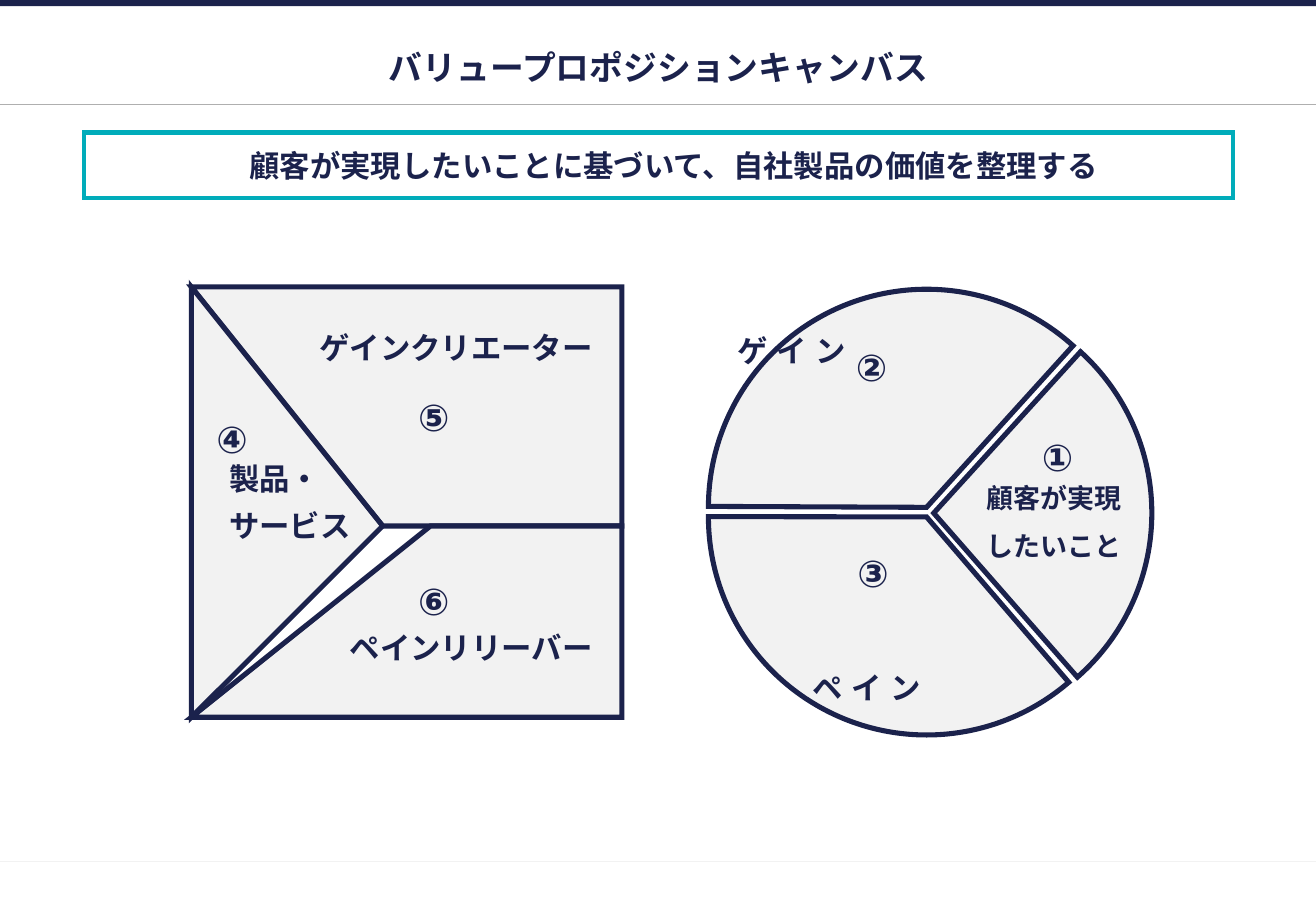
from lxml.etree import SubElement
from pptx import Presentation
from pptx.dml.color import RGBColor
from pptx.enum.shapes import MSO_CONNECTOR, MSO_SHAPE
from pptx.enum.text import MSO_ANCHOR, PP_ALIGN
from pptx.oxml.ns import qn
from pptx.util import Cm, Pt

NAVY, TEAL, PALE, GREY, WHITE = "1B224C", "00ACBA", "F2F2F2", "AFAFAF", "FFFFFF"
SLIDE_WIDTH, SLIDE_HEIGHT = 27.51, 19.05
LEFT, CENTER, RIGHT = PP_ALIGN.LEFT, PP_ALIGN.CENTER, PP_ALIGN.RIGHT
TOP, MIDDLE, BOTTOM = MSO_ANCHOR.TOP, MSO_ANCHOR.MIDDLE, MSO_ANCHOR.BOTTOM


def color(value):
    """Turn a hex string into a colour."""
    return RGBColor.from_string(value)


class CanvasPage:
    """Hold the style and the current page, and draw each kind of element."""

    font_name = "Arial"

    def __init__(self, page):
        """Keep the page to draw on."""
        self.page = page

    def paint(self, shape, fill, line=None, width=3):
        """Set the fill and the sharp-cornered outline of a shape."""
        shape.shadow.inherit = False
        shape.fill.solid()
        shape.fill.fore_color.rgb = color(fill)
        if line is None:
            shape.line.fill.background()
            return shape
        shape.line.color.rgb = color(line)
        shape.line.width = Pt(width)
        SubElement(shape._element.spPr.find(qn("a:ln")), qn("a:miter"), lim="800000")
        return shape

    def add_text(self, shape, text, size=18, align=CENTER, anchor=MIDDLE, insets=(0, 0, 0, 0)):
        """Fill a shape with bold text and return its paragraphs."""
        frame = shape.text_frame
        frame.text = text
        frame.word_wrap = True
        frame.vertical_anchor = anchor
        frame.margin_left, frame.margin_top, frame.margin_right, frame.margin_bottom = map(Cm, insets)
        for para in frame.paragraphs:
            para.alignment = align
            for span in para.runs:
                span.font.size = Pt(size)
                span.font.bold = True
                span.font.color.rgb = color(NAVY)
                span.font.name = self.font_name
                SubElement(span._r.get_or_add_rPr(), qn("a:ea"), typeface=self.font_name)
        return frame.paragraphs

    def rectangle(self, left, top, width, height, fill, line=None, weight=3):
        """Draw a rectangle."""
        box = self.page.shapes.add_shape(
            MSO_SHAPE.RECTANGLE, Cm(left), Cm(top), Cm(width), Cm(height))
        return self.paint(box, fill, line, weight)

    def rule(self, top, line):
        """Draw a thin line across the page."""
        rule = self.page.shapes.add_connector(
            MSO_CONNECTOR.STRAIGHT, 0, Cm(top), Cm(SLIDE_WIDTH), Cm(top))
        rule.line.color.rgb = color(line)
        rule.line.width = Pt(0.75)
        SubElement(rule._element.spPr, qn("a:effectLst"))

    def label(self, left, top, width, height, text, size):
        """Place a centred text box and return its paragraphs."""
        box = self.page.shapes.add_textbox(Cm(left), Cm(top), Cm(width), Cm(height))
        return self.add_text(box, text, size)

    def number(self, x, y, text):
        """Place a circled number around its centre."""
        width, height = 1.2, 1
        self.label(x - width / 2, y - height / 2, width, height, text, 22)

    def sector(self, left, top, start, end):
        """Draw a pie sector between two angles in degrees."""
        diameter = Cm(9.12)
        sector = self.page.shapes.add_shape(
            MSO_SHAPE.PIE, Cm(left), Cm(top), diameter, diameter)
        for index, angle in enumerate((start, end)):
            sector.adjustments[index] = angle * 0.6
        return self.paint(sector, PALE, NAVY)

    def polygon(self, points):
        """Draw a closed outline through points."""
        builder = self.page.shapes.build_freeform(*points[0], scale=Cm(1))
        builder.add_line_segments(points[1:], close=True)
        return self.paint(builder.convert_to_shape(), PALE, NAVY)


def draw_header(canvas):
    """Draw the bars, the title and the framed message."""
    canvas.rule(18.01, PALE)
    canvas.rectangle(0, 0, SLIDE_WIDTH, 0.13, NAVY)
    canvas.rule(2.18, GREY)
    message = canvas.rectangle(1.75, 2.77, 24.03, 1.37, WHITE, TEAL, 2.5)
    para = canvas.add_text(message, "顧客が実現したいことに基づいて、自社製品の価値を整理する",
                           insets=(0.41, 0, 0.41, 0))[0]
    properties = para._p.get_or_add_pPr()
    properties.set("marL", str(Cm(1.27)))
    properties.set("indent", str(Cm(-0.64)))
    canvas.label(1.75, 0.86, 24.03, 1.07, "バリュープロポジションキャンバス", 20)


def draw_customer(canvas):
    """Draw the customer circle."""
    pain = canvas.sector(14.81, 6.25, 49.32, 180.07)
    canvas.add_text(pain, "ペ イ ン", anchor=BOTTOM, insets=(0, 0, 2.49, 0.61))
    canvas.sector(14.96, 6.17, 312.3, 48.8)
    gain = canvas.sector(14.81, 6.05, 180.24, 312.19)
    canvas.add_text(gain, "ゲ イ ン", align=LEFT, anchor=TOP, insets=(0.61, 0.89, 0, 0))
    job = canvas.label(20.42, 10.13, 3.23, 1.57, "顧客が実現\nしたいこと", 16)
    job[1].line_spacing = 1.5


def draw_value(canvas):
    """Draw the value square."""
    creator = canvas.polygon([(8.41, 10.67), (3.68, 6.32), (12.7, 6.35), (12.7, 10.69)])
    canvas.add_text(creator, "ゲインクリエーター", align=RIGHT, anchor=TOP,
                    insets=(0, 0.89, 0.61, 0))
    reliever = canvas.polygon([(3.68, 15.21), (8.53, 10.97), (12.7, 10.95), (12.7, 15.32)])
    canvas.add_text(reliever, "ペインリリーバー", align=RIGHT, anchor=BOTTOM,
                    insets=(0, 0.3, 0.61, 1.09))
    product = canvas.polygon([(3.53, 6.5), (3.53, 15.06), (8.31, 10.87)])
    lines = canvas.add_text(product, "製品・\nサービス", align=LEFT, insets=(0.79, 0, 0, 0))
    lines[1].space_before = Pt(6)


def main():
    """Build and save the deck."""
    deck = Presentation()
    deck.slide_width, deck.slide_height = Cm(SLIDE_WIDTH), Cm(SLIDE_HEIGHT)
    canvas = CanvasPage(deck.slides.add_slide(deck.slide_layouts[6]))
    draw_header(canvas)
    draw_customer(canvas)
    draw_value(canvas)
    centers = [(22.11, 9.56), (18.22, 7.66), (18.25, 11.98),
               (4.85, 9.17), (9.07, 8.71), (9.07, 12.57)]
    for (x, y), text in zip(centers, "①②③④⑤⑥"):
        canvas.number(x, y, text)
    deck.save("out.pptx")


if __name__ == "__main__":
    main()
